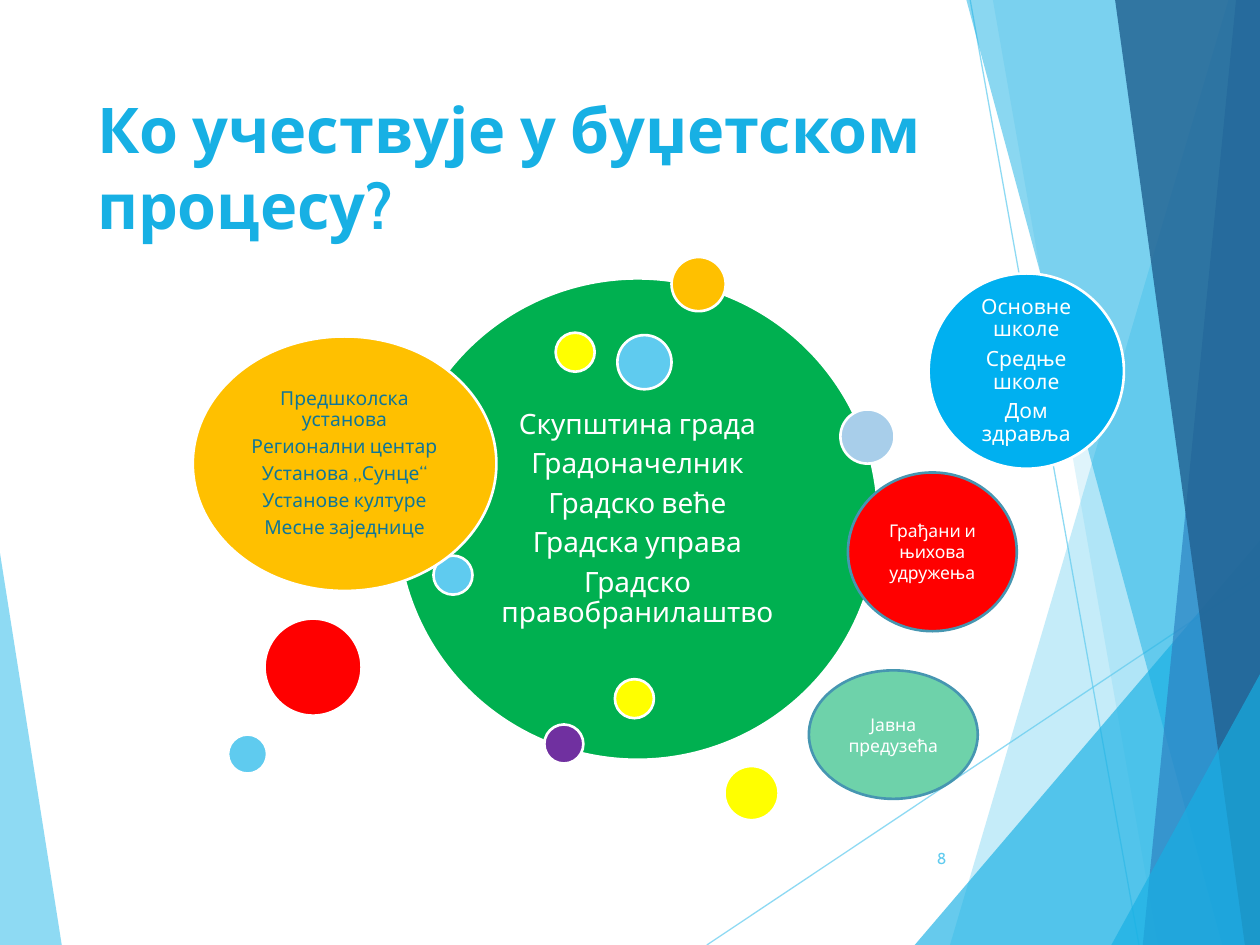
from lxml import etree
from pptx import Presentation
from pptx import util as u
from pptx.dml.color import RGBColor
from pptx.enum import shapes, text
from pptx.oxml import ns

WHITE = RGBColor(0xFF, 0xFF, 0xFF)
SKY = RGBColor(0x5F, 0xCB, 0xEF)
AZURE = RGBColor(0x17, 0xB0, 0xE4)
BLUE = RGBColor(0x2E, 0x83, 0xC3)
NAVY = RGBColor(0x22, 0x62, 0x92)
BRIGHT_BLUE = RGBColor(0x00, 0xB0, 0xF0)
PALE_BLUE = RGBColor(0xA8, 0xCE, 0xEA)
TEAL = RGBColor(0x0F, 0x76, 0x98)
OUTLINE = RGBColor(0x46, 0x96, 0xB1)
GREEN = RGBColor(0x00, 0xB0, 0x50)
MINT = RGBColor(0x6E, 0xD2, 0xAA)
ORANGE = RGBColor(0xFF, 0xC0, 0x00)
YELLOW = RGBColor(0xFF, 0xFF, 0x00)
RED = RGBColor(0xFF, 0x00, 0x00)
PURPLE = RGBColor(0x70, 0x30, 0xA0)

SMALL, MEDIUM, LARGE = 0.31, 0.43, 0.77

# Corner points in inches, colour, opacity in percent
FACETS = [
    ([(0, 4.39), (0.49, 7.5), (0, 7.5)], SKY, 70),
    ([(9.75, 0), (7.54, 7.5), (10, 7.5), (10, 0)], SKY, 36),
    ([(7.88, 0), (9.19, 7.5), (10, 7.5), (10, 0)], SKY, 20),
    ([(7.26, 7.5), (10, 4.29), (10, 7.5)], AZURE, 66),
    ([(7.67, 0), (9.7, 7.5), (10, 7.5), (10, 0)], AZURE, 50),
    ([(9.81, 0), (9.07, 7.5), (10, 7.5), (10, 0)], BLUE, 70),
    ([(8.85, 0), (9.88, 7.5), (10, 7.5), (10, 0)], NAVY, 82),
    ([(8.82, 7.5), (10, 5.35), (10, 7.5)], AZURE, 66),
]
RAYS = [((5.61, 7.5), (10, 4.57)), ((7.7, 0), (9.04, 7.5))]

# Left, top, diameter, colour
DOTS_BEHIND = [
    (5.33, 2.04, MEDIUM, ORANGE),
    (4.32, 5.75, SMALL, PURPLE),
    (5.75, 6.08, MEDIUM, YELLOW),
    (4.41, 2.64, SMALL, YELLOW),
    (3.44, 4.41, SMALL, SKY),
]
DOTS_IN_FRONT = [
    (4.9, 2.66, MEDIUM, SKY),
    (2.1, 4.91, LARGE, RED),
    (6.67, 3.25, MEDIUM, PALE_BLUE),
    (1.81, 5.83, SMALL, SKY),
    (4.88, 5.39, SMALL, YELLOW),
]

CITY_BODIES = ["Скупштина града", "Градоначелник", "Градско веће",
               "Градска управа", "Градско правобранилаштво"]
INSTITUTIONS = ["Предшколска установа", "Регионални центар", "Установа „Сунце“",
                "Установе културе", "Месне заједнице"]
SCHOOLS_AND_HEALTH = ["Основне школе", "Средње школе", "Дом здравља"]


def set_opacity(shape, percent):
    """Apply opacity to the first colour of the shape: its fill, or a connector's line."""
    color = shape.element.spPr.find(".//" + ns.qn("a:srgbClr"))
    etree.SubElement(color, ns.qn("a:alpha")).set("val", str(percent * 1000))


class SlideBuilder:
    font_name = "Cabin"

    def __init__(self, slide):
        self.slide = slide

    def set_lines(self, frame, lines, size, color, align, bold=False, spaced=False):
        frame.word_wrap = True
        for index, line in enumerate(lines):
            paragraph = frame.paragraphs[0] if index == 0 else frame.add_paragraph()
            paragraph.text = line
            paragraph.alignment = align
            paragraph.font.name = self.font_name
            paragraph.font.size = u.Pt(size)
            paragraph.font.bold = bold
            paragraph.font.color.rgb = color
            if spaced:
                paragraph.line_spacing = 0.9
                paragraph.space_after = u.Pt(round(size * 0.33, 1))

    def title(self, wording, left, top, width, height):
        shape = self.slide.shapes.title
        shape.left, shape.top = u.Inches(left), u.Inches(top)
        shape.width, shape.height = u.Inches(width), u.Inches(height)
        shape.text_frame.auto_size = text.MSO_AUTO_SIZE.NONE
        shape.text_frame.vertical_anchor = text.MSO_ANCHOR.TOP
        self.set_lines(shape.text_frame, [wording], 36, AZURE,
                       text.PP_ALIGN.LEFT, bold=True)

    def page_number(self, number, left, top, width, height):
        shape = self.slide.shapes.add_textbox(
            u.Inches(left), u.Inches(top), u.Inches(width), u.Inches(height))
        shape.text_frame.vertical_anchor = text.MSO_ANCHOR.MIDDLE
        self.set_lines(shape.text_frame, [number], 9, SKY, text.PP_ALIGN.RIGHT)

    def facet(self, points, color, opacity):
        corners = [(u.Inches(x), u.Inches(y)) for x, y in points]
        builder = self.slide.shapes.build_freeform(*corners[0])
        builder.add_line_segments(corners[1:], close=True)
        shape = builder.convert_to_shape()
        shape.shadow.inherit = False
        shape.fill.solid()
        shape.fill.fore_color.rgb = color
        set_opacity(shape, opacity)
        shape.line.fill.background()

    def ray(self, start, end):
        connector = self.slide.shapes.add_connector(
            shapes.MSO_CONNECTOR.STRAIGHT, *map(u.Inches, start + end))
        connector.line.color.rgb = SKY
        connector.line.width = u.Pt(0.75)
        set_opacity(connector, 70)
        etree.SubElement(connector.element.spPr, ns.qn("a:effectLst"))

    def ellipse(self, left, top, width, height, color, outline=WHITE):
        shape = self.slide.shapes.add_shape(
            shapes.MSO_SHAPE.OVAL,
            u.Inches(left), u.Inches(top), u.Inches(width), u.Inches(height))
        shape.shadow.inherit = False
        shape.fill.solid()
        shape.fill.fore_color.rgb = color
        shape.line.color.rgb = outline
        shape.line.width = u.Pt(1.5)
        return shape

    def dots(self, dots):
        for left, top, diameter, color in dots:
            self.ellipse(left, top, diameter, diameter, color)

    def group_bubble(self, box, color, lines, size, font_color=WHITE):
        """Ellipse listing several participants, one to a paragraph."""
        frame = self.ellipse(*box, color).text_frame
        frame.vertical_anchor = text.MSO_ANCHOR.MIDDLE
        frame.margin_left = frame.margin_right = u.Inches(0.05)
        self.set_lines(frame, lines, size, font_color, text.PP_ALIGN.CENTER, spaced=True)

    def single_bubble(self, box, color, wording):
        """Outlined ellipse naming one participant."""
        frame = self.ellipse(*box, color, OUTLINE).text_frame
        frame.vertical_anchor = text.MSO_ANCHOR.MIDDLE
        self.set_lines(frame, [wording], 10, WHITE, text.PP_ALIGN.CENTER)


def main():
    presentation = Presentation()
    presentation.slide_width = u.Inches(10)
    presentation.slide_height = u.Inches(7.5)
    title_only = presentation.slide_layouts[5]
    builder = SlideBuilder(presentation.slides.add_slide(title_only))

    for start, end in RAYS:
        builder.ray(start, end)
    for points, color, opacity in FACETS:
        builder.facet(points, color, opacity)

    builder.title("Ко учествује у буџетском процесу?", 0.67, 0.67, 6.94, 1.44)
    builder.page_number("8", 7.05, 6.61, 0.56, 0.4)

    builder.group_bubble((3.15, 2.21, 3.82, 3.82), GREEN, CITY_BODIES, 16)
    builder.dots(DOTS_BEHIND)
    builder.group_bubble((1.53, 2.67, 2.41, 2.02), ORANGE, INSTITUTIONS, 11, TEAL)
    builder.group_bubble((7.37, 2.17, 1.55, 1.55), BRIGHT_BLUE, SCHOOLS_AND_HEALTH, 12)
    builder.dots(DOTS_IN_FRONT)
    builder.single_bubble((6.73, 3.75, 1.34, 1.26), RED, "Грађани и њихова удружења")
    builder.single_bubble((6.42, 5.32, 1.34, 1.02), MINT, "Јавна предузећа")

    presentation.save("out.pptx")


if __name__ == "__main__":
    main()
